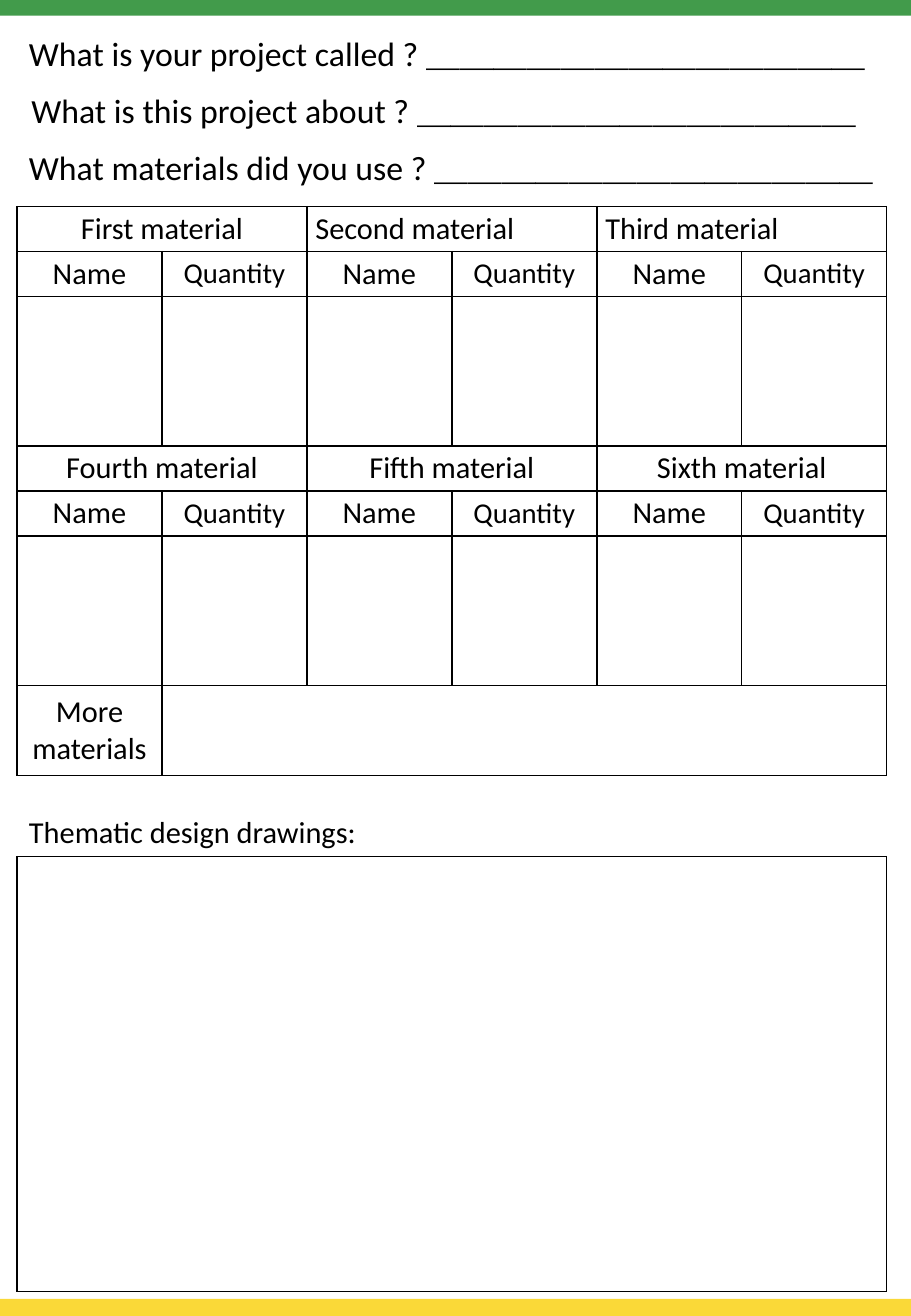
from dataclasses import dataclass

from lxml.etree import SubElement
from pptx import Presentation
from pptx.dml.color import RGBColor
from pptx.enum.shapes import MSO_SHAPE as Preset
from pptx.enum.text import MSO_ANCHOR as Anchor, MSO_AUTO_SIZE as AutoSize, PP_ALIGN as Align
from pptx.oxml.ns import qn
from pptx.slide import Slide
from pptx.table import Table, _Cell as Cell
from pptx.text.text import _Paragraph as Paragraph
from pptx.util import Inches, Pt

PAGE_WIDTH, PAGE_HEIGHT = 7.5, 10.83
MARGIN = 0.14
COLUMN = 7.16 / 6
HEADING_ROW, ENTRY_ROW, MORE_ROW, DRAWING_ROW = 0.37, 1.23, 0.74, 3.58
MATERIALS_TOP = 1.7
MATERIALS_HEIGHT = 2 * HEADING_ROW + ENTRY_ROW
MORE_TOP = MATERIALS_TOP + 2 * MATERIALS_HEIGHT
DRAWING_TOP = 7.05
QUESTION_TOP, QUESTION_STEP = 0.22, 0.47
BAND_HEIGHT = 0.14
BLACK, GREEN, YELLOW = "000000", "429B4B", "FAD938"
ANSWER_LINE = "＿" * 13


@dataclass
class Band:
    top: float
    color: str


@dataclass
class Label:
    left: float
    top: float
    text: str
    size: int
    answer: str = ""


@dataclass
class Material:
    heading: str
    align: Align = Align.CENTER


BANDS = [Band(-0.01, GREEN), Band(PAGE_HEIGHT - BAND_HEIGHT, YELLOW)]
QUESTIONS = [
    (MARGIN, "What is your project called ? "),
    (MARGIN + 0.02, "What is this project about ? "),
    (MARGIN, "What materials did you use ? "),
]
LABELS = [
    Label(left, QUESTION_TOP + index * QUESTION_STEP, question, 20, ANSWER_LINE)
    for index, (left, question) in enumerate(QUESTIONS)
] + [Label(MARGIN, 6.64, "Thematic design drawings:", 18)]
MATERIAL_GROUPS = [
    [
        Material("First material"),
        Material("Second material", Align.LEFT),
        Material("Third material", Align.LEFT),
    ],
    [Material("Fourth material"), Material("Fifth material"), Material("Sixth material")],
]


def rgb(color: str) -> RGBColor:
    return RGBColor.from_string(color)


def add_run(paragraph: Paragraph, text: str, size: int, bold: bool = False) -> None:
    run = paragraph.add_run()
    run.text = text
    run.font.name = "Calibri"
    run.font.size = Pt(size)
    run.font.bold = bold
    run.font.color.rgb = rgb(BLACK)


def add_band(slide: Slide, band: Band) -> None:
    strip = slide.shapes.add_shape(
        Preset.RECTANGLE, 0, Inches(band.top), Inches(PAGE_WIDTH), Inches(BAND_HEIGHT)
    )
    strip.shadow.inherit = False
    strip.fill.solid()
    strip.fill.fore_color.rgb = rgb(band.color)
    strip.line.fill.background()


def add_label(slide: Slide, label: Label) -> None:
    box = slide.shapes.add_textbox(
        Inches(label.left), Inches(label.top),
        Inches(PAGE_WIDTH - label.left), Inches(label.size * 0.022),
    )
    frame = box.text_frame
    frame.word_wrap = True
    frame.auto_size = AutoSize.SHAPE_TO_FIT_TEXT
    add_run(frame.paragraphs[0], label.text, label.size)
    if label.answer:
        add_run(frame.paragraphs[0], label.answer, label.size, bold=True)


def outline_cell(cell: Cell) -> None:
    properties = cell._tc.get_or_add_tcPr()
    for side in ("a:lnL", "a:lnR", "a:lnT", "a:lnB"):
        border = SubElement(properties, qn(side), w=str(Pt(1)))
        fill = SubElement(border, qn("a:solidFill"))
        SubElement(fill, qn("a:srgbClr"), val=BLACK)
    cell.fill.background()


def add_grid(slide: Slide, top: float, columns: list[float], rows: list[float]) -> Table:
    grid = slide.shapes.add_table(
        len(rows), len(columns), Inches(MARGIN), Inches(top),
        Inches(sum(columns)), Inches(sum(rows)),
    ).table
    grid.first_row = grid.horz_banding = False
    for column, width in zip(grid.columns, columns):
        column.width = Inches(width)
    for row, height in zip(grid.rows, rows):
        row.height = Inches(height)
    for cell in grid.iter_cells():
        outline_cell(cell)
    return grid


def write_cell(cell: Cell, text: str, size: int = 18, align: Align = Align.CENTER) -> None:
    cell.vertical_anchor = Anchor.MIDDLE
    paragraph = cell.text_frame.paragraphs[0]
    paragraph.alignment = align
    add_run(paragraph, text, size)


def write_heading(cell: Cell, text: str, size: int = 18, align: Align = Align.CENTER) -> None:
    cell.margin_left = cell.margin_right = Inches(0.07)
    cell.margin_top = cell.margin_bottom = Inches(0.03)
    write_cell(cell, text, size, align)


def add_materials(slide: Slide, top: float, materials: list[Material]) -> None:
    grid = add_grid(
        slide, top, [COLUMN] * 2 * len(materials), [HEADING_ROW, HEADING_ROW, ENTRY_ROW]
    )
    for index, material in enumerate(materials):
        name, quantity = 2 * index, 2 * index + 1
        grid.cell(0, name).merge(grid.cell(0, quantity))
        write_heading(grid.cell(0, name), material.heading, align=material.align)
        write_heading(grid.cell(1, name), "Name")
        write_heading(grid.cell(1, quantity), "Quantity", 17)


def main() -> None:
    deck = Presentation()
    deck.slide_width, deck.slide_height = Inches(PAGE_WIDTH), Inches(PAGE_HEIGHT)
    slide = deck.slides.add_slide(deck.slide_layouts.get_by_name("Blank"))
    for band in BANDS:
        add_band(slide, band)
    for index, materials in enumerate(MATERIAL_GROUPS):
        add_materials(slide, MATERIALS_TOP + index * MATERIALS_HEIGHT, materials)
    more_materials = add_grid(slide, MORE_TOP, [COLUMN, 5 * COLUMN], [MORE_ROW])
    write_cell(more_materials.cell(0, 0), "More materials")
    add_grid(slide, DRAWING_TOP, [6 * COLUMN], [DRAWING_ROW])
    for label in LABELS:
        add_label(slide, label)
    deck.save("out.pptx")


if __name__ == "__main__":
    main()
